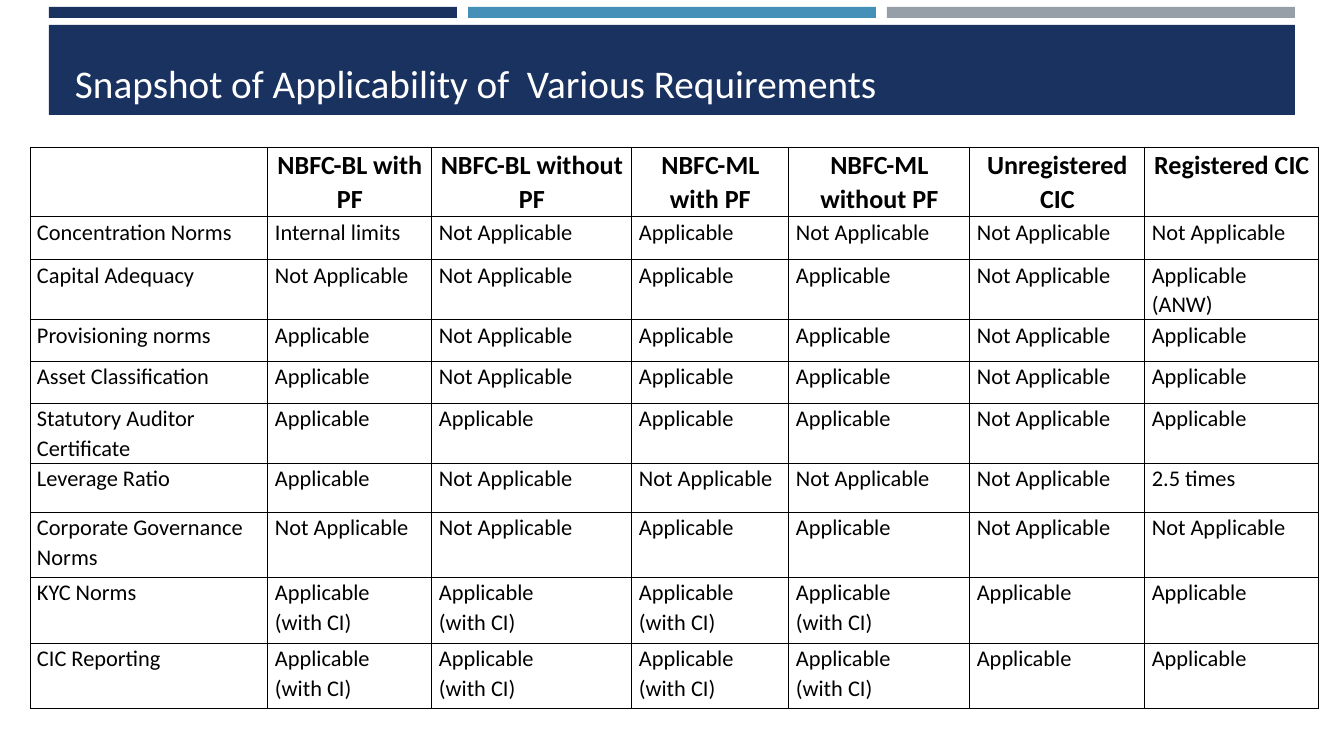
from lxml import etree
from pptx import Presentation
from pptx import util as u
from pptx.dml.color import RGBColor
from pptx.enum import shapes, text
from pptx.oxml.ns import qn

PX = 9144000 / 1344  # EMU per px, slide is 1344 px wide
FONT = "Calibri"
COLORS = {"navy": "1A3260", "blue": "4590B8", "grey": "969FA7",
          "white": "FFFFFF", "black": "000000"}

YES, NO, CI = "Applicable", "Not Applicable", "Applicable\n(with CI)"
HEADINGS = ["", "NBFC-BL with PF", "NBFC-BL without PF", "NBFC-ML with PF",
            "NBFC-ML without PF", "Unregistered CIC", "Registered CIC"]
REQUIREMENTS = [
    ["Concentration Norms", "Internal limits", NO, YES, NO, NO, NO],
    ["Capital Adequacy", NO, NO, YES, YES, NO, "Applicable (ANW)"],
    ["Provisioning norms", YES, NO, YES, YES, NO, YES],
    ["Asset Classification", YES, NO, YES, YES, NO, YES],
    ["Statutory Auditor Certificate", YES, YES, YES, YES, NO, YES],
    ["Leverage Ratio", YES, NO, NO, NO, NO, "2.5 times"],
    ["Corporate Governance Norms", NO, NO, YES, YES, NO, NO],
    ["KYC Norms", CI, CI, CI, CI, YES, YES],
    ["CIC Reporting", CI, CI, CI, CI, YES, YES],
]
COLUMN_WIDTHS = [238, 164, 200, 157, 181, 175, 174]
ROW_HEIGHTS = [70, 43, 60, 42, 42, 60, 49, 65, 66, 65]


def px(length):
    return u.Emu(round(length * PX))


def rgb(name):
    return RGBColor.from_string(COLORS[name])


def style_font(font, size, color, bold=False):
    font.name, font.size, font.bold = FONT, u.Pt(size), bold
    font.color.rgb = rgb(color)


def add_bar(slide, left, top, width, height, color):
    bar = slide.shapes.add_shape(shapes.MSO_SHAPE.RECTANGLE,
                                 px(left), px(top), px(width), px(height))
    bar.shadow.inherit = False
    bar.fill.solid()
    bar.fill.fore_color.rgb = rgb(color)
    bar.line.fill.background()


def place_title(slide, wording):
    title = slide.shapes.title
    title.left, title.top, title.width, title.height = map(px, (65, 35, 1216, 76))
    frame = title.text_frame
    frame.text = wording
    frame.word_wrap = True
    frame.auto_size = text.MSO_AUTO_SIZE.NONE
    frame.vertical_anchor = text.MSO_ANCHOR.BOTTOM
    frame.margin_left = frame.margin_right = px(10)
    frame.margin_top = frame.margin_bottom = px(5)
    heading = frame.paragraphs[0]
    heading.alignment = text.PP_ALIGN.LEFT
    style_font(heading.runs[0].font, 21, "white")
    # Bring the title in front of its banner
    slide.shapes._spTree.append(title._element)


def add_borders(cell):
    properties = cell._tc.get_or_add_tcPr()
    for side in ("a:lnL", "a:lnR", "a:lnT", "a:lnB"):
        line = etree.SubElement(properties, qn(side), w=str(u.Pt(0.56)))
        fill = etree.SubElement(line, qn("a:solidFill"))
        etree.SubElement(fill, qn("a:srgbClr"), val=COLORS["black"])


def fill_cell(cell, wording, alignment, size, bold):
    add_borders(cell)
    cell.fill.background()
    cell.margin_left = cell.margin_right = px(7)
    cell.margin_top = cell.margin_bottom = 0
    cell.vertical_anchor = text.MSO_ANCHOR.TOP
    cell.text_frame.text = wording
    for paragraph in cell.text_frame.paragraphs:
        paragraph.alignment = alignment
        paragraph.line_spacing = 1.07
        for run in paragraph.runs:
            style_font(run.font, size, "black", bold)


def add_requirements_table(slide, left, top):
    rows = [HEADINGS] + REQUIREMENTS
    table = slide.shapes.add_table(
        len(rows), len(HEADINGS), px(left), px(top),
        px(sum(COLUMN_WIDTHS)), px(sum(ROW_HEIGHTS))).table
    table.first_row = table.horz_banding = False
    for column, width in zip(table.columns, COLUMN_WIDTHS):
        column.width = px(width)
    for row, height in zip(table.rows, ROW_HEIGHTS):
        row.height = px(height)
    for r, wordings in enumerate(rows):
        for c, wording in enumerate(wordings):
            if r == 0:
                alignment = text.PP_ALIGN.CENTER
            else:
                alignment = text.PP_ALIGN.JUSTIFY if c else text.PP_ALIGN.LEFT
            fill_cell(table.cell(r, c), wording, alignment,
                      size=12 if r else 14, bold=r == 0)


def main():
    deck = Presentation()
    deck.slide_width, deck.slide_height = px(1344), px(756)
    slide = deck.slides.add_slide(deck.slide_layouts[5])

    # Strip of three bars above the banner
    for i, color in enumerate(("navy", "blue", "grey")):
        add_bar(slide, 49 + i * 419, 7, 408, 11, color)

    # Title banner
    add_bar(slide, 49, 25, 1246, 90, "navy")
    place_title(slide, "Snapshot of Applicability of  Various Requirements")

    # Requirements by type of company
    add_requirements_table(slide, 30, 147)

    deck.save("out.pptx")


if __name__ == "__main__":
    main()
